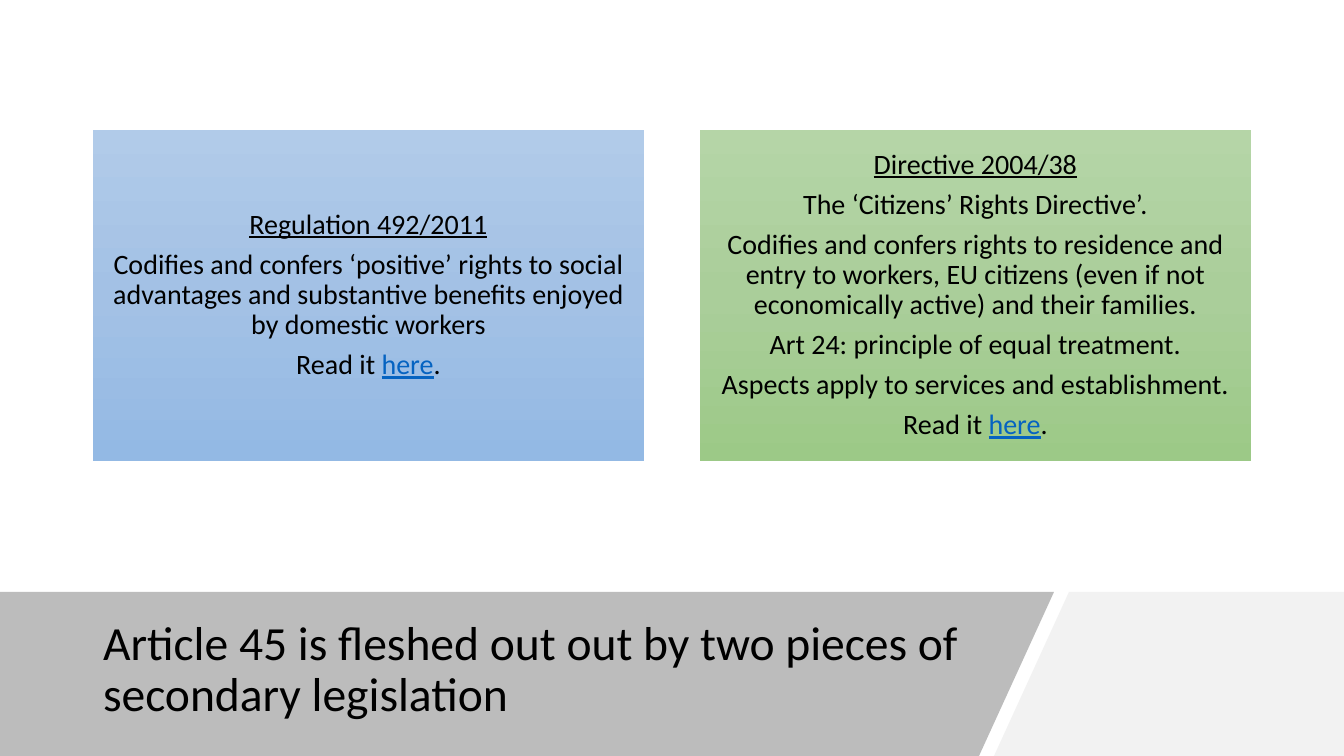
from copy import deepcopy

from pptx import Presentation
from pptx import util as u
from pptx.dml.color import RGBColor
from pptx.enum import shapes, text
from pptx.oxml.ns import qn
from lxml import etree

PX = 914400 / 100.8
WIDTH, HEIGHT = 1344, 756
BAND_TOP = 592
CARD_LEFT, CARD_TOP, CARD_W, CARD_H, CARD_STEP = 93, 130, 551, 331, 607

COLORS = {
    "text": "000000",
    "link": "0563C1",
    "band": "595959",
    "corner": "F2F2F2",
}
GRADIENTS = {
    "blue": ("B1CBE9", "A3C1E5", "93B9E4"),
    "green": ("B5D5A7", "AACE9A", "9CC987"),
}
HEADING = {"underline": True}
LINK = {"underline": True, "color": "link"}
READ_IT = [("Read it ", {}), ("here", LINK), (".", {})]

CARDS = [
    ("blue", [
        [("Regulation 492/2011", HEADING)],
        [("Codifies and confers ‘positive’ rights to social advantages and "
          "substantive benefits enjoyed by domestic workers", {})],
        READ_IT,
    ]),
    ("green", [
        [("Directive 2004/38", HEADING)],
        [("The ‘Citizens’ Rights Directive’.", {})],
        [("Codifies and confers rights to residence and entry to workers, "
          "EU citizens (even if not economically active) and their families.", {})],
        [("Art 24: principle of equal treatment.", {})],
        [("Aspects apply to services and establishment.", {})],
        READ_IT,
    ]),
]


def px(n):
    return u.Emu(round(n * PX))


def rgb(name):
    return RGBColor.from_string(COLORS[name])


def set_attrs(obj, values):
    for name, value in values.items():
        setattr(obj, name, value)


def place(sp, left, top, width, height):
    set_attrs(sp, {"left": px(left), "top": px(top),
                   "width": px(width), "height": px(height)})


def add_runs(p, runs, size):
    for words, style in runs:
        r = p.add_run()
        r.text = words
        set_attrs(r.font, {"name": "Calibri", "size": u.Pt(size),
                           "underline": style.get("underline", False)})
        r.font.color.rgb = rgb(style.get("color", "text"))


def add_panel(s, points, color, opacity=100):
    builder = s.shapes.build_freeform(*points[0], scale=PX)
    builder.add_line_segments(points[1:], close=True)
    sp = builder.convert_to_shape()
    sp.shadow.inherit = False
    sp.line.fill.background()
    sp.fill.solid()
    sp.fill.fore_color.rgb = rgb(color)
    if opacity < 100:
        clr = sp.element.spPr.find(".//" + qn("a:srgbClr"))
        etree.SubElement(clr, qn("a:alpha")).set("val", str(opacity * 1000))


def fill_gradient(sp, colors):
    sp.fill.gradient()
    sp.fill.gradient_angle = 270
    stops = sp.element.spPr.find(".//" + qn("a:gsLst"))
    stops.insert(1, deepcopy(stops[0]))
    for i, (stop, color) in enumerate(zip(sp.fill.gradient_stops, colors)):
        stop.position = i / (len(colors) - 1)
        stop.color.rgb = RGBColor.from_string(color)


def add_card(s, left, colors, paragraphs):
    sp = s.shapes.add_shape(shapes.MSO_SHAPE.RECTANGLE, px(left), px(CARD_TOP),
                            px(CARD_W), px(CARD_H))
    sp.shadow.inherit = False
    sp.line.fill.background()
    fill_gradient(sp, colors)
    tf = sp.text_frame
    set_attrs(tf, {"word_wrap": True, "vertical_anchor": text.MSO_ANCHOR.MIDDLE})
    set_attrs(tf, {f"margin_{side}": px(8)
                   for side in ("left", "top", "right", "bottom")})
    for i, runs in enumerate(paragraphs):
        p = tf.add_paragraph() if i else tf.paragraphs[0]
        set_attrs(p, {"alignment": text.PP_ALIGN.CENTER, "line_spacing": 0.9,
                      "space_after": u.Pt(7)})
        add_runs(p, runs, 20)


def set_title(s, words):
    sp = s.shapes.title
    place(sp, 93, 610, 890, 121)
    s.shapes.element.append(sp.element)
    tf = sp.text_frame
    set_attrs(tf, {"word_wrap": True, "auto_size": text.MSO_AUTO_SIZE.NONE,
                   "vertical_anchor": text.MSO_ANCHOR.MIDDLE})
    p = tf.paragraphs[0]
    set_attrs(p, {"alignment": text.PP_ALIGN.LEFT, "line_spacing": 0.9})
    add_runs(p, [(words, {})], 34)


def main():
    prs = Presentation()
    set_attrs(prs, {"slide_width": px(WIDTH), "slide_height": px(HEIGHT)})
    s = prs.slides.add_slide(prs.slide_layouts[5])
    add_panel(s, [(1069, BAND_TOP), (WIDTH, BAND_TOP), (WIDTH, HEIGHT),
                  (994, HEIGHT)], "corner")
    add_panel(s, [(0, BAND_TOP), (1054, BAND_TOP), (979, HEIGHT),
                  (0, HEIGHT)], "band", opacity=40)
    set_title(s, "Article 45 is fleshed out out by two pieces of secondary legislation")
    for i, (gradient, paragraphs) in enumerate(CARDS):
        add_card(s, CARD_LEFT + i * CARD_STEP, GRADIENTS[gradient], paragraphs)
    prs.save("out.pptx")


if __name__ == "__main__":
    main()
